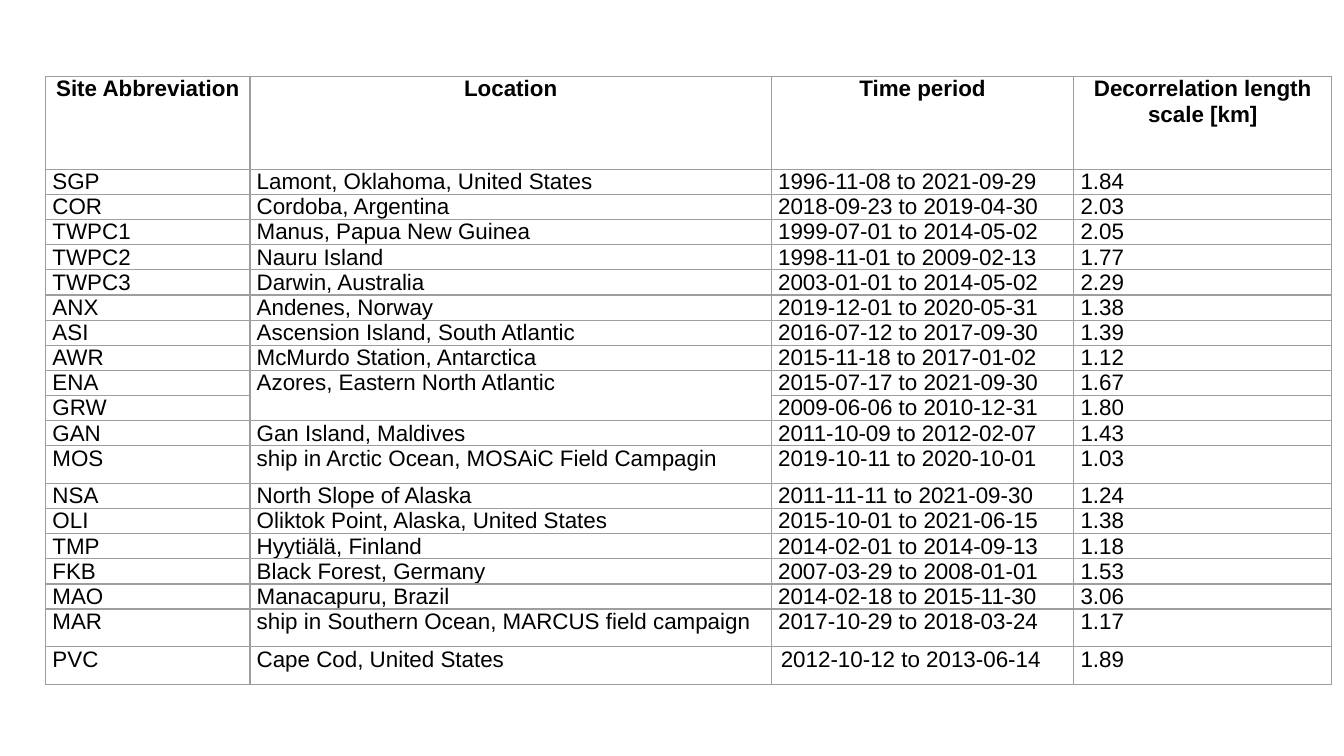
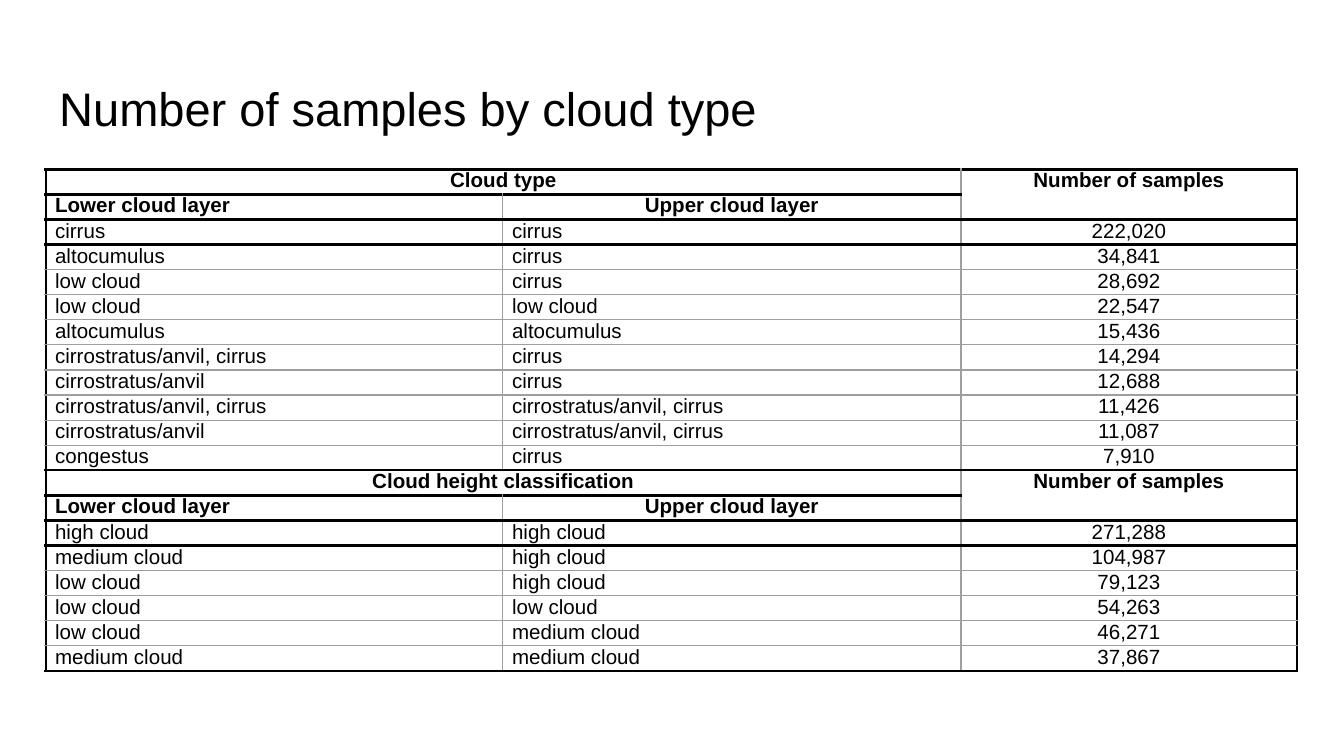
from dataclasses import dataclass

from lxml import etree
from pptx import Presentation
from pptx.dml.color import RGBColor
from pptx.enum.text import MSO_ANCHOR as Anchor, PP_ALIGN as Align
from pptx.oxml.ns import qn
from pptx.util import Inches, Pt


@dataclass(frozen=True)
class Theme:
    font: str = "Arial"
    ink: str = "000000"
    grid: str = "9E9E9E"
    thin: float = 0.75
    thick: float = 1.5
    title_size: float = 25.2
    site_size: float = 12
    sample_size: float = 11
    left: float = 0.34


THEME = Theme()

# Content: observation sites
SITE_HEADER = ("Site Abbreviation", "Location", "Time period", "Decorrelation length scale [km]")
SITES = [
    ("SGP", "Lamont, Oklahoma, United States", "1996-11-08 to 2021-09-29", "1.84"),
    ("COR", "Cordoba, Argentina", "2018-09-23 to 2019-04-30", "2.03"),
    ("TWPC1", "Manus, Papua New Guinea", "1999-07-01 to 2014-05-02", "2.05"),
    ("TWPC2", "Nauru Island", "1998-11-01 to 2009-02-13", "1.77"),
    ("TWPC3", "Darwin, Australia", "2003-01-01 to 2014-05-02", "2.29"),
    ("ANX", "Andenes, Norway", "2019-12-01 to 2020-05-31", "1.38"),
    ("ASI", "Ascension Island, South Atlantic", "2016-07-12 to 2017-09-30", "1.39"),
    ("AWR", "McMurdo Station, Antarctica", "2015-11-18 to 2017-01-02", "1.12"),
    ("ENA", "Azores, Eastern North Atlantic", "2015-07-17 to 2021-09-30", "1.67"),
    ("GRW", "", "2009-06-06 to 2010-12-31", "1.80"),
    ("GAN", "Gan Island, Maldives", "2011-10-09 to 2012-02-07", "1.43"),
    ("MOS", "ship in Arctic Ocean, MOSAiC Field Campagin", "2019-10-11 to 2020-10-01", "1.03"),
    ("NSA", "North Slope of Alaska", "2011-11-11 to 2021-09-30", "1.24"),
    ("OLI", "Oliktok Point, Alaska, United States", "2015-10-01 to 2021-06-15", "1.38"),
    ("TMP", "Hyytiälä, Finland", "2014-02-01 to 2014-09-13", "1.18"),
    ("FKB", "Black Forest, Germany", "2007-03-29 to 2008-01-01", "1.53"),
    ("MAO", "Manacapuru, Brazil", "2014-02-18 to 2015-11-30", "3.06"),
    ("MAR", "ship in Southern Ocean, MARCUS field campaign", "2017-10-29 to 2018-03-24", "1.17"),
    ("PVC", "Cape Cod, United States", "2012-10-12 to 2013-06-14", "1.89"),
]
TALL_SITES = {"MOS", "MAR", "PVC"}
SITE_COLUMNS = (1.52, 3.88, 2.25, 1.92)
SITE_ALIGNS = (Align.JUSTIFY, None, None, None)

# Content: sample counts, in two sections
SAMPLES_TITLE = "Number of samples by cloud type"
COUNT_HEADING = "Number of samples"
LAYER_HEADINGS = ("Lower cloud layer", "Upper cloud layer", "")
SECTIONS = [
    ("Cloud type", [
        ("cirrus", "cirrus", "222,020"),
        ("altocumulus", "cirrus", "34,841"),
        ("low cloud", "cirrus", "28,692"),
        ("low cloud", "low cloud", "22,547"),
        ("altocumulus", "altocumulus", "15,436"),
        ("cirrostratus/anvil, cirrus", "cirrus", "14,294"),
        ("cirrostratus/anvil", "cirrus", "12,688"),
        ("cirrostratus/anvil, cirrus", "cirrostratus/anvil, cirrus", "11,426"),
        ("cirrostratus/anvil", "cirrostratus/anvil, cirrus", "11,087"),
        ("congestus", "cirrus", "7,910"),
    ]),
    ("Cloud height classification", [
        ("high cloud", "high cloud", "271,288"),
        ("medium cloud", "high cloud", "104,987"),
        ("low cloud", "high cloud", "79,123"),
        ("low cloud", "low cloud", "54,263"),
        ("low cloud", "medium cloud", "46,271"),
        ("medium cloud", "medium cloud", "37,867"),
    ]),
]
SAMPLE_COLUMNS = (3.4, 3.41, 2.5)
SAMPLE_ALIGNS = (Align.JUSTIFY, None, Align.CENTER)
SAMPLE_TABLE_HEIGHT = 3.74


# Shared helpers
def write_text(frame, text, *, size, bold=False, align=None):
    paragraph = frame.paragraphs[0]
    paragraph.alignment = align
    run = paragraph.add_run()
    run.text = text
    run.font.name = THEME.font
    run.font.size = Pt(size)
    run.font.bold = bold
    run.font.color.rgb = RGBColor.from_string(THEME.ink)


def set_borders(cell, thick_sides=""):
    properties = cell._tc.get_or_add_tcPr()
    for side in "LRTB":
        thick = side in thick_sides
        width = Pt(THEME.thick if thick else THEME.thin)
        line = etree.SubElement(properties, qn(f"a:ln{side}"), w=str(width))
        fill = etree.SubElement(line, qn("a:solidFill"))
        etree.SubElement(fill, qn("a:srgbClr"), val=THEME.ink if thick else THEME.grid)


def format_cell(cell, text, *, inset, thick_sides="", **text_format):
    cell.margin_left = cell.margin_right = Inches(inset)
    cell.margin_top = cell.margin_bottom = 0
    set_borders(cell, thick_sides)
    cell.fill.background()
    write_text(cell.text_frame, text, **text_format)


def add_grid(slide, top, widths, heights):
    table = slide.shapes.add_table(
        len(heights), len(widths), Inches(THEME.left), Inches(top),
        Inches(sum(widths)), Inches(sum(heights))).table
    table.first_row = table.horz_banding = False
    for column, width in zip(table.columns, widths):
        column.width = Inches(width)
    for row, height in zip(table.rows, heights):
        row.height = Inches(height)
    return table


# Slide 1: site table
def build_sites(presentation):
    slide = presentation.slides.add_slide(presentation.slide_layouts[6])
    heights = [0.69] + [0.28 if site[0] in TALL_SITES else 0.14 for site in SITES]
    table = add_grid(slide, 0.57, SITE_COLUMNS, heights)
    for row, texts in enumerate([SITE_HEADER] + SITES):
        header = row == 0
        for column, text in enumerate(texts):
            last_period = row == len(SITES) and column == 2
            format_cell(table.cell(row, column), text,
                        inset=0.07 if last_period else 0.05,
                        size=THEME.site_size, bold=header,
                        align=Align.CENTER if header else SITE_ALIGNS[column])
    # The two Azores sites share one location
    for row, site in enumerate(SITES, start=1):
        if not site[1]:
            table.cell(row - 1, 1).merge(table.cell(row, 1))


# Slide 2: title and sample table
def build_samples(presentation):
    slide = presentation.slides.add_slide(presentation.slide_layouts[5])
    title = slide.shapes.title
    title.left, title.top = Inches(THEME.left), Inches(0.49)
    title.width, title.height = Inches(9.32), Inches(0.63)
    frame = title.text_frame
    frame.margin_left = frame.margin_right = Inches(0.1)
    frame.margin_top = frame.margin_bottom = Inches(0.1)
    frame.vertical_anchor = Anchor.MIDDLE
    frame.word_wrap = True
    write_text(frame, SAMPLES_TITLE, size=THEME.title_size, align=Align.LEFT)

    row_count = sum(len(rows) + 2 for _, rows in SECTIONS)
    heights = [SAMPLE_TABLE_HEIGHT / row_count] * row_count
    table = add_grid(slide, 1.26, SAMPLE_COLUMNS, heights)
    start = 0
    for heading, rows in SECTIONS:
        section = [(heading, "", COUNT_HEADING), LAYER_HEADINGS] + rows
        last = len(section) - 1
        for offset, texts in enumerate(section):
            header = offset < 2
            # Thick rules frame the headings and the first data row
            ruled = ("T" if offset <= 3 else "") + ("B" if offset <= 2 or offset == last else "")
            for column, text in enumerate(texts):
                centered = header and (offset == 0 or column > 0)
                format_cell(table.cell(start + offset, column), text, inset=0.07,
                            thick_sides=ruled + ("L", "", "R")[column],
                            size=THEME.sample_size, bold=header,
                            align=Align.CENTER if centered else SAMPLE_ALIGNS[column])
        table.cell(start, 0).merge(table.cell(start, 1))
        table.cell(start, 2).merge(table.cell(start + 1, 2))
        start += len(section)


def main():
    presentation = Presentation()
    # Widescreen, 16:9
    presentation.slide_width = Inches(10)
    presentation.slide_height = Inches(10) * 9 // 16
    build_sites(presentation)
    build_samples(presentation)
    presentation.save("out.pptx")


if __name__ == "__main__":
    main()
